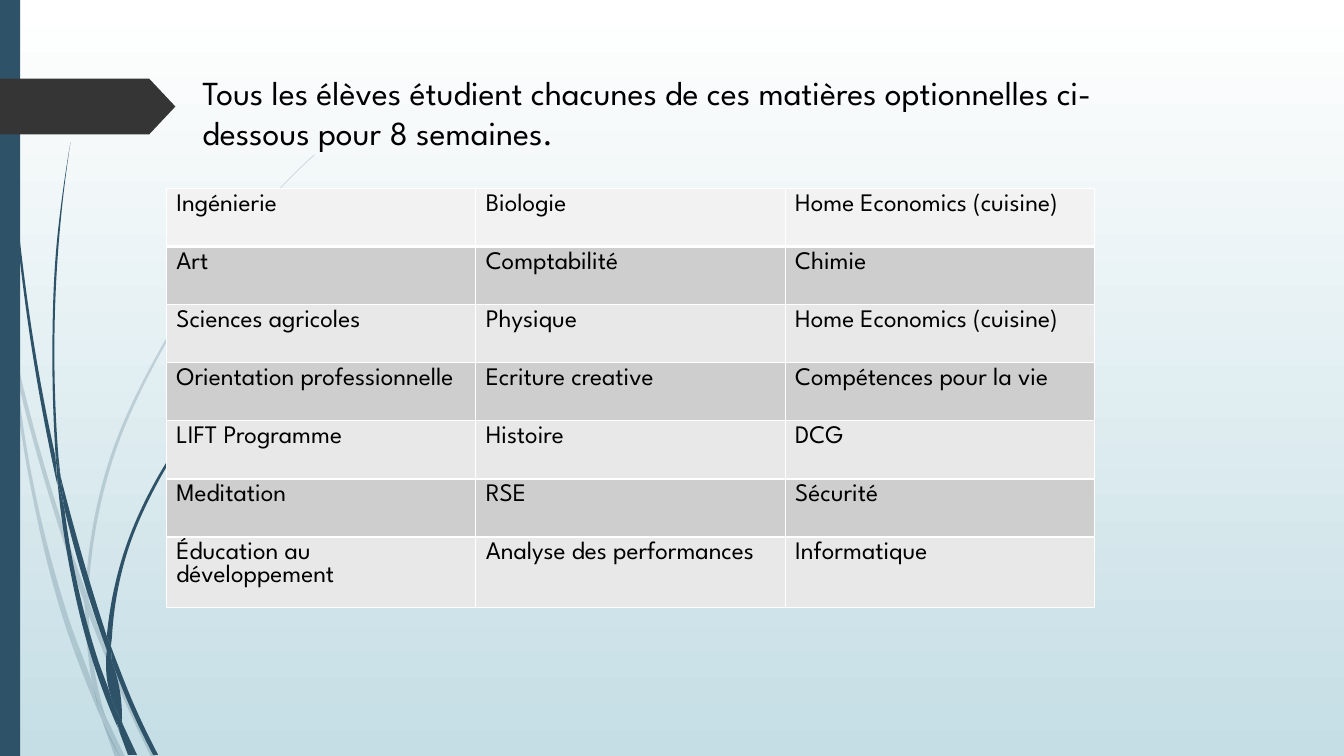
from lxml import etree
from pptx import Presentation
from pptx.dml.color import RGBColor
from pptx.enum.shapes import MSO_SHAPE
from pptx.oxml.ns import qn
from pptx.util import Pt

RECT, TAG = MSO_SHAPE.RECTANGLE, MSO_SHAPE.PENTAGON
FONT = "League Spartan"
BLUE, CHARCOAL, BLACK, WHITE = "2E5369", "353535", "000000", "FFFFFF"
HEADER_FILL, BAND_FILLS = "F2F2F2", ("CECECE", "E8E8E8")
UNIT = 0.72  # points per step of the blade coordinates

TITLE = ("Tous les élèves étudient chacunes de ces matières optionnelles "
         "ci-dessous pour 8 semaines.")
SUBJECTS = [
    ("Ingénierie", "Biologie", "Home Economics (cuisine)"),
    ("Art", "Comptabilité", "Chimie"),
    ("Sciences agricoles", "Physique", "Home Economics (cuisine)"),
    ("Orientation professionnelle", "Ecriture creative", "Compétences pour la vie"),
    ("LIFT\u00a0Programme", "Histoire", "DCG"),
    ("Meditation", "RSE", "Sécurité"),
    ("Éducation au développement", "Analyse des performances", "Informatique"),
]

# Each blade of grass is a list of smooth edges, joined end to end
PALE_BLADES = [
    [[(11, 350), (9, 322), (0, 282)], [(0, 299), (10, 344)]],
    [[(17, 376), (58, 522), (84, 599)], [(85, 586), (62, 520), (14, 345)]],
    [[(88, 610), (123, 694), (150, 751)], [(155, 751), (127, 692), (92, 607), (88, 596)]],
    [[(119, 751), (124, 751)], [(105, 711)]],
    [[(11, 350), (28, 470), (65, 621), (92, 693), (101, 714)],
     [(99, 707), (93, 683), (70, 619), (31, 469), (17, 376)]],
    [[(84, 599), (87, 646), (93, 683), (96, 692), (105, 711)],
     [(103, 706), (91, 646), (88, 610)]],
    [[(88, 596)],
     [(88, 584), (110, 462), (160, 349), (229, 245), (268, 198), (290, 175), (312, 154)],
     [(312, 153), (289, 175), (268, 197), (228, 244), (158, 348), (107, 461), (85, 584)]],
    [[(101, 714), (114, 751)], [(119, 751)]],
    [[(88, 610), (88, 596)], [(85, 586), (84, 599)]],
    [[(93, 683), (99, 707), (119, 751)], [(105, 711), (96, 692)]],
]
DARK_BLADES = [
    [[(3, 0), (4, 48), (7, 110), (17, 233), (33, 355), (56, 477)], [(57, 481)],
     [(55, 453), (36, 355), (19, 232), (8, 109), (5, 48), (4, 0)]],
    [[(64, 505), (88, 592), (106, 645)], [(106, 631), (93, 590), (60, 472)]],
    [[(111, 656), (132, 708), (152, 749)], [(157, 749), (136, 706), (113, 649), (110, 641)]],
    [[(57, 477), (68, 557), (93, 659), (111, 708), (117, 722)],
     [(116, 717), (110, 691), (98, 657), (72, 556), (64, 505)]],
    [[(60, 472)], [(58, 453), (54, 349), (58, 245), (63, 193), (70, 141)],
     [(70, 141), (62, 193), (56, 245), (52, 349), (55, 449)]],
    [[(133, 749), (136, 749)], [(122, 719)]],
    [[(57, 477), (64, 505)], [(60, 472), (55, 449)]],
    [[(111, 633), (125, 552), (158, 476), (205, 406), (231, 374), (245, 359), (261, 344)],
     [(260, 344), (245, 358), (231, 373), (204, 405), (156, 474), (122, 551), (106, 631)],
     [(110, 641)]],
    [[(117, 722), (127, 749)], [(131, 749)]],
    [[(106, 645), (110, 691), (116, 706), (122, 719)], [(121, 716), (111, 656), (109, 651)]],
    [[(106, 645), (111, 656)], [(110, 641), (106, 631)]],
    [[(110, 691), (116, 717), (130, 749)], [(133, 749), (122, 719), (116, 706)]],
]


def rgb(color):
    return RGBColor.from_string(color)


def paint(sp, color, alpha=None):
    sp.shadow.inherit = False
    sp.fill.solid()
    sp.fill.fore_color.rgb = rgb(color)
    sp.line.fill.background()
    if alpha:
        clr = sp._element.spPr.find(qn("a:solidFill"))[0]
        etree.SubElement(clr, qn("a:alpha")).set("val", str(alpha * 1000))


def add_run(p, text, size):
    r = p.add_run()
    r.text = text
    r.font.name, r.font.size = FONT, Pt(size)
    r.font.color.rgb = rgb(BLACK)


def smooth(edge):
    """Bezier triples (control, control, end) of a smooth curve through the edge."""
    pts = [complex(x, y) for x, y in edge]
    if len(pts) < 3:
        return [[p] for p in pts[1:]]
    lengths = [abs(q - p) for p, q in zip(pts, pts[1:])]
    chords = [(q - p) / h for p, q, h in zip(pts, pts[1:], lengths)]
    inner = [(h2 * v1 + h1 * v2) / (h1 + h2) for h1, h2, v1, v2
             in zip(lengths, lengths[1:], chords, chords[1:])]
    slopes = [2 * chords[0] - inner[0], *inner, 2 * chords[-1] - inner[-1]]
    return [[p + m * h / 3, q - n * h / 3, q] for p, q, m, n, h
            in zip(pts, pts[1:], slopes, slopes[1:], lengths)]


def add_blade(s, left, top, edges):
    moves = [move for edge in edges for move in [[complex(*edge[0])], *smooth(edge)]]
    points = [(Pt(left + z.real * UNIT), Pt(top + z.imag * UNIT))
              for move in moves for z in move]
    fb = s.shapes.build_freeform(*points[0], scale=1.0)
    fb.add_line_segments(points[1:], close=True)
    sp = fb.convert_to_shape()
    # Join each run of three points into one curve
    lines = iter(list(sp._element.iter(qn("a:lnTo"))))
    for move in moves[1:]:
        group = [next(lines) for _ in move]
        if len(group) == 3:
            curve = etree.Element(qn("a:cubicBezTo"))
            group[0].addprevious(curve)
            for line in group:
                curve.append(line[0])
                line.getparent().remove(line)
    return sp


def add_grass(s, left, top, blades, alpha=None):
    for edges in blades:
        paint(add_blade(s, left, top, edges), BLUE, alpha)


def add_background(s):
    fill = s.background.fill
    fill.gradient()
    fill.gradient_angle = 270
    for stop, color, position in zip(fill.gradient_stops, (WHITE, "C5DEE5"), (0, 1)):
        stop.color.rgb = rgb(color)
        stop.position = position


def add_side_bar(s, left, top, height):
    bar = s.shapes.add_shape(RECT, Pt(left), Pt(top), Pt(14.4), Pt(height))
    paint(bar, BLUE)
    tag = s.shapes.add_shape(TAG, Pt(left), Pt(top + 56.2), Pt(125.3), Pt(39.8))
    tag.adjustments[0] = 0.47
    paint(tag, CHARCOAL)


def add_title(s, left, top, width, height):
    tf = s.shapes.add_textbox(Pt(left), Pt(top), Pt(width), Pt(height)).text_frame
    tf.word_wrap = True
    add_run(tf.paragraphs[0], TITLE, 24)


def add_borders(cell, widths):
    tcPr = cell._tc.get_or_add_tcPr()
    for i, (side, width) in enumerate(widths.items()):
        ln = etree.Element(qn(f"a:ln{side}"), w=str(Pt(width)))
        fill = etree.SubElement(ln, qn("a:solidFill"))
        etree.SubElement(fill, qn("a:srgbClr")).set("val", WHITE)
        tcPr.insert(i, ln)


def add_subject_table(s, left, top, width, row_height, last_height):
    n_rows, n_cols = len(SUBJECTS), len(SUBJECTS[0])
    heights = [row_height] * (n_rows - 1) + [last_height]
    table = s.shapes.add_table(n_rows, n_cols, Pt(left), Pt(top), Pt(width),
                               Pt(sum(heights))).table
    table.first_row = table.horz_banding = False
    for col in table.columns:
        col.width = Pt(width / n_cols)
    for i, subjects in enumerate(SUBJECTS):
        table.rows[i].height = Pt(heights[i])
        for j, subject in enumerate(subjects):
            cell = table.cell(i, j)
            cell.fill.solid()
            cell.fill.fore_color.rgb = rgb(BAND_FILLS[(i - 1) % 2] if i else HEADER_FILL)
            add_borders(cell, {"L": 1, "R": 1, "T": 3 if i == 1 else 1, "B": 1 if i else 3})
            add_run(cell.text_frame.paragraphs[0], subject, 18)


def main():
    prs = Presentation()
    prs.slide_width, prs.slide_height = Pt(960), Pt(540)
    s = prs.slides.add_slide(prs.slide_layouts[6])
    # Backdrop
    add_background(s)
    add_grass(s, 0, 0, PALE_BLADES, alpha=20)
    add_grass(s, 0, 0, DARK_BLADES)
    add_side_bar(s, 0, 0, 540)
    # Content
    add_subject_table(s, 118.8, 134.6, 663.1, 41.5, 50.5)
    add_title(s, 137.5, 47.5, 699, 65.5)
    prs.save("out.pptx")


if __name__ == "__main__":
    main()
